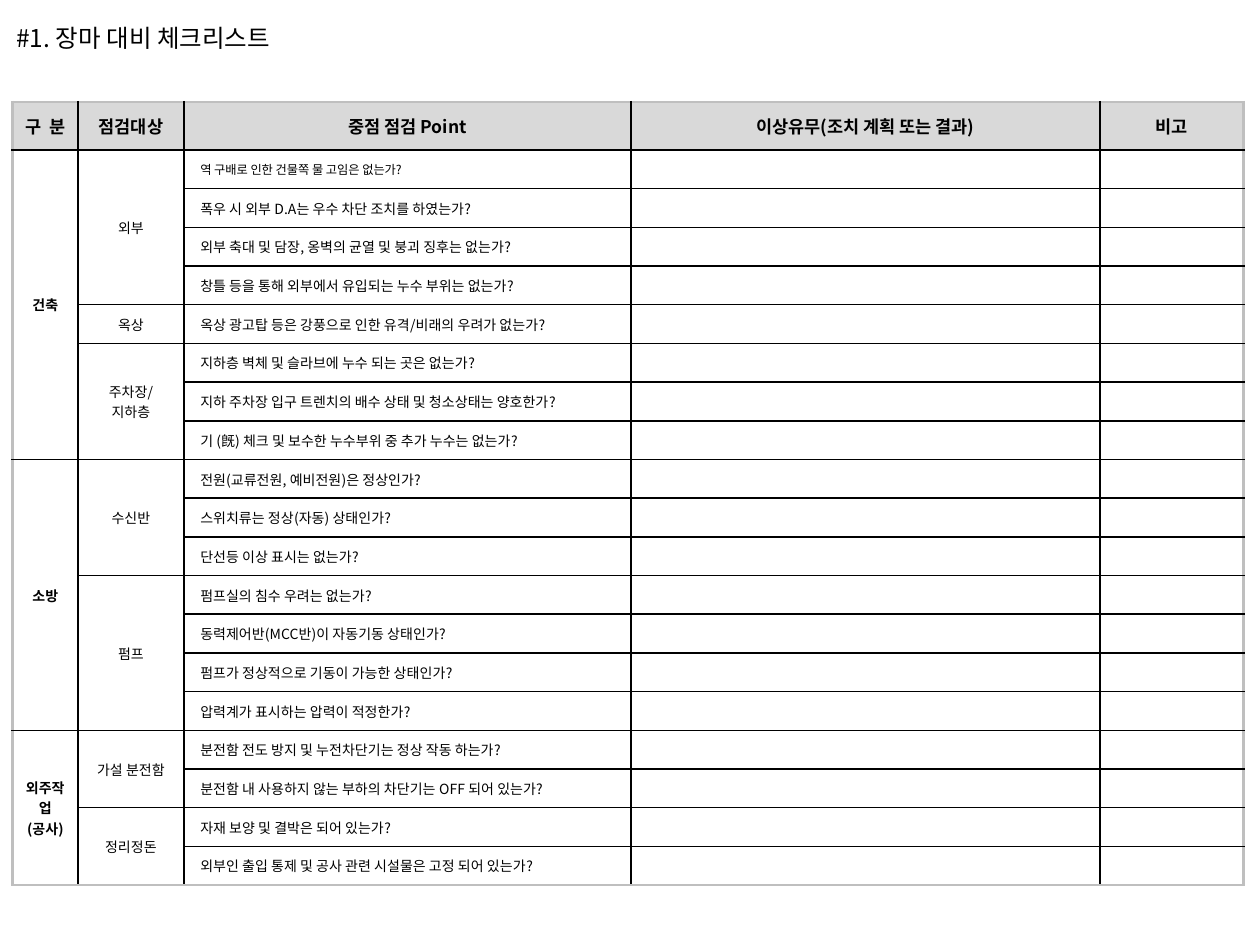
from lxml.etree import SubElement
from pptx import Presentation
from pptx.dml.color import RGBColor as RGB
from pptx.enum.text import MSO_ANCHOR as Anchor, PP_ALIGN as Align
from pptx.oxml import parse_xml
from pptx.oxml.ns import nsdecls, qn
from pptx.util import Inches, Pt

BLACK = RGB(0x00, 0x00, 0x00)
GREY = RGB(0xD9, 0xD9, 0xD9)
EDGE = RGB(0xBF, 0xBF, 0xBF)
FONT = "Noto Sans CJK KR"

COLS = [0.52, 0.84, 3.55, 3.72, 1.14]
PADS = [0.07, 0.07, 0.13, 0.13, 0.13]
LEFT, TOP, HIGH, HEAD_H = 0.1, 0.81, 6.22, 0.38

HEADS = ["구  분", "점검대상", "중점 점검 Point", "이상유무(조치 계획 또는 결과)", "비고"]
# Field, then its targets, each with the points to check
CHECKS = [
    ("건축", [
        ("외부", ["역 구배로 인한 건물쪽 물 고임은 없는가?",
                "폭우 시 외부 D.A는 우수 차단 조치를 하였는가?",
                "외부 축대 및 담장, 옹벽의 균열 및 붕괴 징후는 없는가?",
                "창틀 등을 통해 외부에서 유입되는 누수 부위는 없는가?"]),
        ("옥상", ["옥상 광고탑 등은 강풍으로 인한 유격/비래의 우려가 없는가?"]),
        ("주차장/\v지하층", ["지하층 벽체 및 슬라브에 누수 되는 곳은 없는가?",
                        "지하 주차장 입구 트렌치의 배수 상태 및 청소상태는 양호한가?",
                        "기 (旣) 체크 및 보수한 누수부위 중 추가 누수는 없는가?"]),
    ]),
    ("소방", [
        ("수신반", ["전원(교류전원, 예비전원)은 정상인가?",
                 "스위치류는 정상(자동) 상태인가?",
                 "단선등 이상 표시는 없는가?"]),
        ("펌프", ["펌프실의 침수 우려는 없는가?",
                "동력제어반(MCC반)이 자동기동 상태인가?",
                "펌프가 정상적으로 기동이 가능한 상태인가?",
                "압력계가 표시하는 압력이 적정한가?"]),
    ]),
    ("외주작업\n(공사)", [
        ("가설 분전함", ["분전함 전도 방지 및 누전차단기는 정상 작동 하는가?",
                    "분전함 내 사용하지 않는 부하의 차단기는 OFF 되어 있는가?"]),
        ("정리정돈", ["자재 보양 및 결박은 되어 있는가?",
                  "외부인 출입 통제 및 공사 관련 시설물은 고정 되어 있는가?"]),
    ]),
]


def write(frame, text, size=8, bold=False, align=Align.LEFT):
    frame.text = text
    for para in frame.paragraphs:
        para.alignment = align
        for run in para.runs:
            font = run.font
            font.size, font.bold, font.name = Pt(size), bold, FONT
            font.color.rgb = BLACK
            # Hangul takes the East Asian typeface
            SubElement(run._r.get_or_add_rPr(), qn("a:ea"), typeface=FONT)
        if not para.runs:
            # Keeps an empty cell as low as its row
            SubElement(para._p, qn("a:endParaRPr"), sz=str(size * 100))


def border(cell, sides):
    props = cell._tc.get_or_add_tcPr()
    for spot, (side, outer) in enumerate(sides):
        color, width = (EDGE, 1.5) if outer else (BLACK, 1)
        props.insert(spot, parse_xml(
            f'<a:ln{side} {nsdecls("a")} w="{Pt(width)}"><a:solidFill>'
            f'<a:srgbClr val="{color}"/></a:solidFill></a:ln{side}>'))


def style(table):
    last = len(table.rows) - 1
    for r, row in enumerate(table.rows):
        for c, cell in enumerate(row.cells):
            cell.vertical_anchor = Anchor.MIDDLE
            cell.margin_left = cell.margin_right = Inches(PADS[c])
            cell.margin_top = cell.margin_bottom = Inches(0.04)
            if r == 0:
                cell.fill.solid()
                cell.fill.fore_color.rgb = GREY
            else:
                cell.fill.background()
            low = r + (cell.span_height if cell.is_merge_origin else 1) - 1
            border(cell, [("L", c == 0), ("R", c == len(COLS) - 1),
                          ("T", r == 0), ("B", low == last)])
            if not cell.text_frame.text:
                write(cell.text_frame, "")


def group(table, row, col, count, text, bold=False):
    cell = table.cell(row, col)
    if count > 1:
        cell.merge(table.cell(row + count - 1, col))
    write(cell.text_frame, text, bold=bold, align=Align.CENTER)


def checklist(slide):
    total = sum(len(points) for _, parts in CHECKS for _, points in parts)
    table = slide.shapes.add_table(
        total + 1, len(COLS), Inches(LEFT), Inches(TOP),
        Inches(sum(COLS)), Inches(HIGH)).table
    table.horz_banding = False
    for col, width in zip(table.columns, COLS):
        col.width = Inches(width)
    for r, row in enumerate(table.rows):
        row.height = Inches((HIGH - HEAD_H) / total if r else HEAD_H)

    # Header row
    for c, head in enumerate(HEADS):
        write(table.cell(0, c).text_frame, head, size=10, bold=True, align=Align.CENTER)

    # Fields, targets and points
    row = 1
    for field, parts in CHECKS:
        group(table, row, 0, sum(len(points) for _, points in parts), field, bold=True)
        for target, points in parts:
            group(table, row, 1, len(points), target)
            for point in points:
                write(table.cell(row, 2).text_frame, point, size=7 if row == 1 else 8)
                row += 1
    style(table)


def heading(slide, text):
    title = slide.shapes.title
    title.left, title.top = Inches(0.03), Inches(0.13)
    title.width, title.height = Inches(5.24), Inches(0.34)
    frame = title.text_frame
    frame.word_wrap = True
    frame.vertical_anchor = Anchor.MIDDLE
    write(frame, text, size=14)


def main():
    deck = Presentation()
    deck.slide_width, deck.slide_height = Inches(10), Inches(7.5)
    slide = deck.slides.add_slide(deck.slide_layouts[5])
    heading(slide, "#1. 장마 대비 체크리스트")
    checklist(slide)
    deck.save("out.pptx")


if __name__ == "__main__":
    main()
